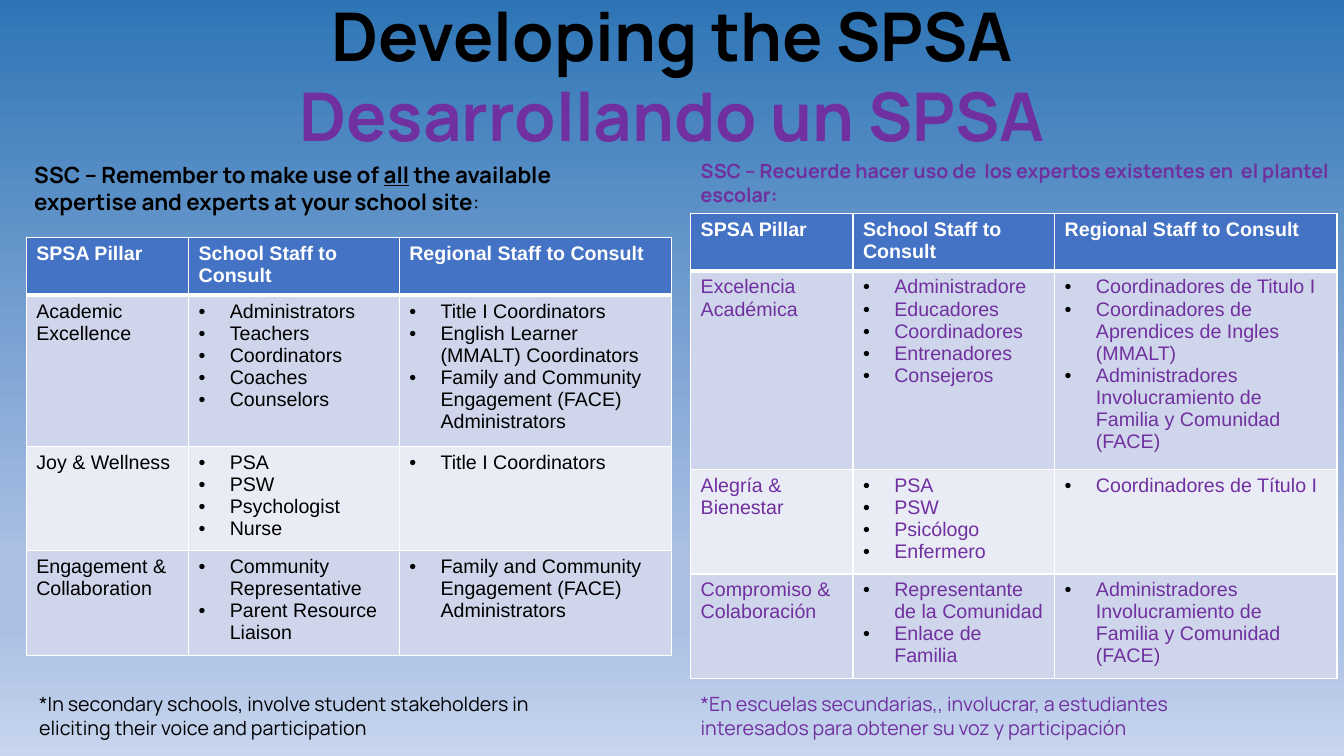
import pptx
import pptx.util
import pptx.dml.color
import pptx.enum.text
import pptx.oxml
import pptx.oxml.ns

WIDE, HIGH = 13.33, 7.5
BLACK, PURPLE, WHITE = "000000", "7030A0", "FFFFFF"
HEAD, BANDS = "4472C4", ("CFD5EA", "E9EBF5")
SKY = ((0, "2E75B6"), (74, "ABC0E4"), (83, "ABC0E4"), (100, "C7D5ED"))
NS = 'xmlns:a="http://schemas.openxmlformats.org/drawingml/2006/main"'
LEFT, RIGHT = 0.26, 6.85

ENGLISH = (
    ("SPSA Pillar", "School Staff to Consult", "Regional Staff to Consult"),
    ("Academic Excellence",
     "Administrators\nTeachers\nCoordinators\nCoaches\nCounselors",
     "Title I Coordinators\nEnglish Learner (MMALT) Coordinators\n"
     "Family and Community Engagement (FACE) Administrators"),
    ("Joy & Wellness", "PSA\nPSW\nPsychologist\nNurse", "Title I Coordinators"),
    ("Engagement & Collaboration",
     "Community Representative\nParent Resource Liaison",
     "Family and Community Engagement (FACE) Administrators"),
)
SPANISH = (
    ENGLISH[0],
    ("Excelencia Académica",
     "Administradore\nEducadores\nCoordinadores\nEntrenadores\nConsejeros",
     "Coordinadores de Titulo I\nCoordinadores de Aprendices de Ingles (MMALT)\n"
     "Administradores Involucramiento de Familia y Comunidad (FACE)"),
    ("Alegría & Bienestar", "PSA\nPSW\nPsicólogo\nEnfermero",
     "Coordinadores de Título I"),
    ("Compromiso & Colaboración",
     "Representante de la Comunidad\nEnlace de Familia",
     "Administradores Involucramiento de Familia y Comunidad (FACE)"),
)


def color(code):
    return pptx.dml.color.RGBColor.from_string(code)


def style(run, size, code, bold=False, face="Manrope"):
    run.font.name = face
    run.font.size = pptx.util.Pt(size)
    run.font.bold = bold
    run.font.color.rgb = color(code)


def add_xml(parent, body):
    parent.append(pptx.oxml.parse_xml(body.replace(">", f" {NS}>", 1)
                                      if "/>" not in body.split(">")[0] + ">"
                                      else body.replace("/>", f" {NS}/>", 1)))


def paint(slide):
    fill = slide.background.fill
    fill.gradient()
    fill.gradient_angle = 270
    stops = next(slide.element.iter(pptx.oxml.ns.qn("a:gsLst")))
    for stop in list(stops):
        stops.remove(stop)
    for share, code in SKY:
        add_xml(stops, f'<a:gs pos="{share * 1000}"><a:srgbClr val="{code}"/></a:gs>')


def add_text(slide, box, text, size, code, bold=False):
    shape = slide.shapes.add_textbox(*map(pptx.util.Inches, box))
    frame = shape.text_frame
    frame.word_wrap = True
    frame.text = text
    for run in frame.paragraphs[0].runs:
        style(run, size, code, bold)
    return frame.paragraphs[0]


def add_title(slide, box):
    para = add_text(slide, box, "Developing the SPSA\vDesarrollando un SPSA",
                    48, BLACK, True)
    para.alignment = pptx.enum.text.PP_ALIGN.CENTER
    para.runs[1].font.color.rgb = color(PURPLE)


def add_lead(slide, box):
    para = add_text(slide, box, "SSC – Remember to make use of ", 16, BLACK, True)
    for text, line, bold in (
        ("all", True, True),
        (" the available expertise and experts at your school site", False, True),
        (":", False, False),
    ):
        run = para.add_run()
        run.text = text
        style(run, 16, BLACK, bold)
        run.font.underline = line


def add_edges(cell, row):
    props = cell._tc.get_or_add_tcPr()
    for side in "LRTB":
        thick = (row, side) in ((0, "B"), (1, "T"))
        width = pptx.util.Pt(3 if thick else 1)
        add_xml(props, f'<a:ln{side} w="{width}"><a:solidFill>'
                       f'<a:srgbClr val="{WHITE}"/></a:solidFill></a:ln{side}>')


def add_bullet(para):
    props = para._p.get_or_add_pPr()
    inset = pptx.util.Inches(0.31)
    props.set("marL", str(inset))
    props.set("indent", str(-inset))
    add_xml(props, f'<a:buClr><a:srgbClr val="{BLACK}"/></a:buClr>')
    add_xml(props, '<a:buFont typeface="Arial"/>')
    add_xml(props, '<a:buChar char="•"/>')


def fill_cell(cell, text, row, col, code):
    add_edges(cell, row)
    cell.fill.solid()
    cell.fill.fore_color.rgb = color(BANDS[(row - 1) % 2] if row else HEAD)
    cell.text_frame.text = text
    for para in cell.text_frame.paragraphs:
        if row and col:
            add_bullet(para)
        for run in para.runs:
            style(run, 14, code if row else WHITE, not row, "Arial")


def add_grid(slide, left, top, data, cols, rows, code):
    box = (left, top, sum(cols), sum(rows))
    frame = slide.shapes.add_table(len(rows), len(cols), *map(pptx.util.Inches, box))
    table = frame.table
    for col, width in enumerate(cols):
        table.columns[col].width = pptx.util.Inches(width)
    for row, height in enumerate(rows):
        table.rows[row].height = pptx.util.Inches(height)
        for col, text in enumerate(data[row]):
            fill_cell(table.cell(row, col), text, row, col, code)


def main():
    deck = pptx.Presentation()
    deck.slide_width = pptx.util.Inches(WIDE)
    deck.slide_height = pptx.util.Inches(HIGH)
    slide = deck.slides.add_slide(deck.slide_layouts[6])
    paint(slide)
    add_lead(slide, (0.24, 1.55, 5.78, 4.86))
    add_title(slide, (1.01, -0.11, 11.31, 1.5))
    add_grid(slide, LEFT, 2.36, ENGLISH, (1.61, 2.09, 2.7),
             (0.57, 1.45, 1, 1.04), BLACK)
    add_text(slide, (0.29, 6.82, 5.71, 0.57),
             "*In secondary schools, involve student stakeholders in "
             "eliciting their voice and participation", 14, BLACK)
    add_text(slide, (RIGHT, 6.82, 5.71, 0.57),
             "*En escuelas secundarias,, involucrar, a estudiantes "
             "interesados para obtener su voz y participación", 14, PURPLE)
    add_text(slide, (RIGHT, 1.53, WIDE - RIGHT, 0.57),
             "SSC – Recuerde hacer uso de  los expertos existentes en  "
             "el plantel escolar:", 14, PURPLE, True)
    add_grid(slide, RIGHT, 2.12, SPANISH, (1.61, 2, 2.8),
             (0.57, 1.97, 1.03, 1.04), PURPLE)
    deck.save("out.pptx")


if __name__ == "__main__":
    main()
